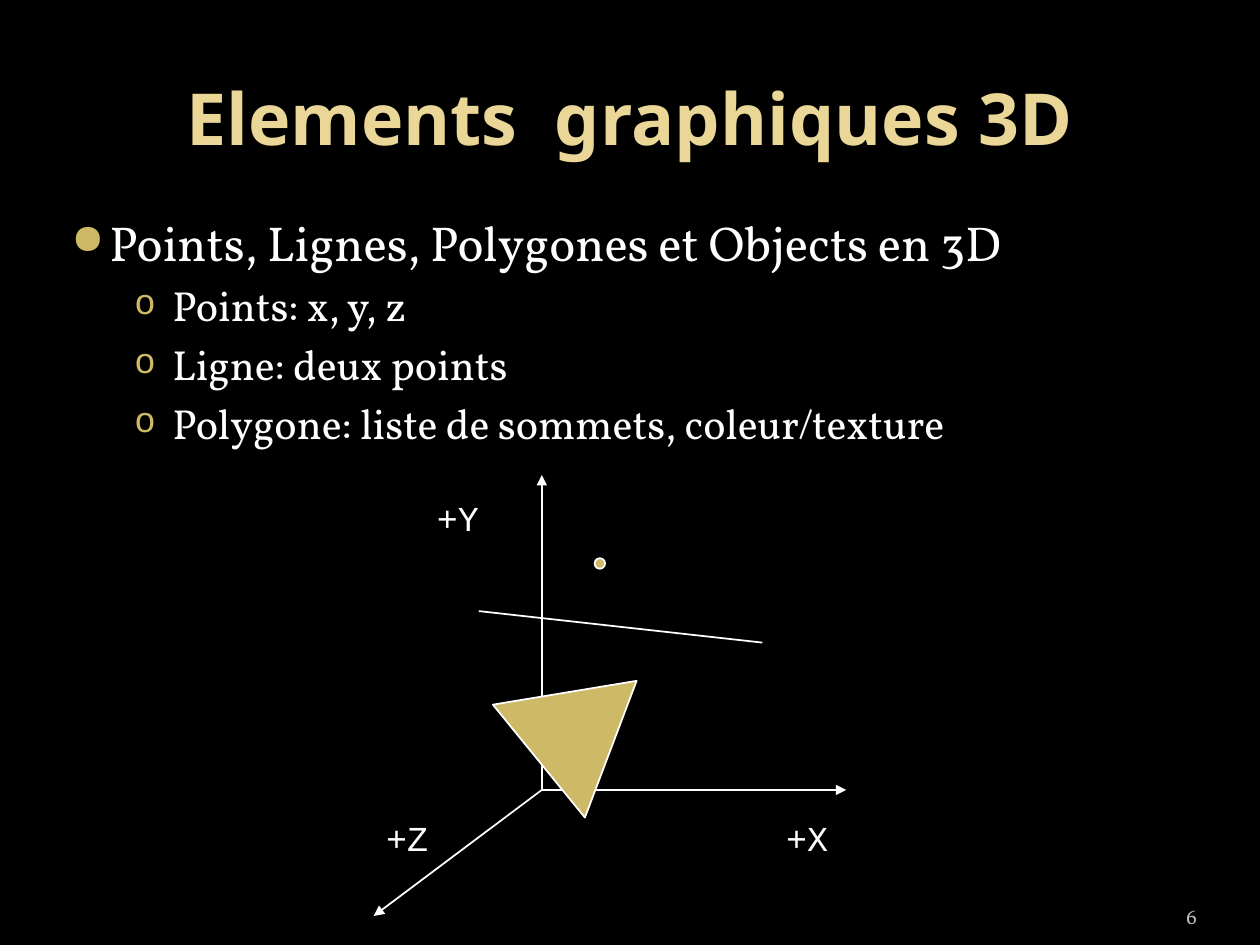
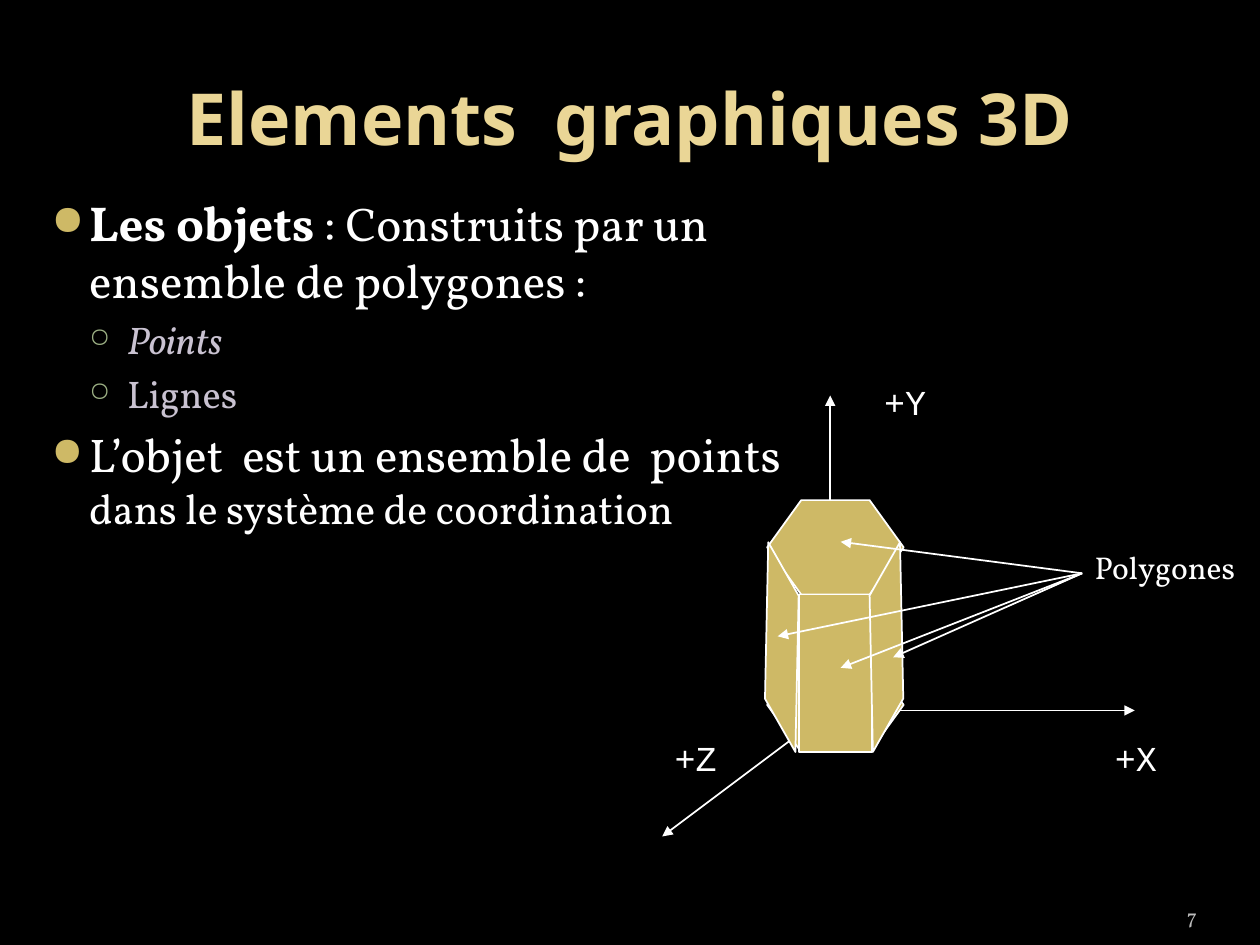
from lxml import etree
from pptx import Presentation
from pptx.dml.color import RGBColor
from pptx.enum.shapes import MSO_CONNECTOR as Link, MSO_SHAPE as Kind
from pptx.enum.text import MSO_ANCHOR as Anchor, MSO_AUTO_SIZE as Fit, PP_ALIGN as Align
from pptx.oxml.ns import qn
from pptx.util import Pt

SERIF, SANS, MONO = "Vollkorn", "Noto Sans", "Courier New"
WHITE, GOLD, PALE = "FFFFFF", "CEB966", "EAD696"
GREY, GREEN, LILAC = "BDBDBD", "9CB084", "C9C2D1"

# Bullet styles: margin, sign, colour, size in percent, font
DOT = (21.6, "●", GOLD, 85, None)
LOOP = (57.6, "o", GOLD, 85, MONO)
RING = (43.2, "○", GREEN, 70, None)


def rgb(code):
    return RGBColor.from_string(code)


def style(run, size, color=WHITE, face=SERIF, bold=False, italic=False):
    font = run.font
    font.size, font.name = Pt(size), face
    font.bold, font.italic = bold, italic
    font.color.rgb = rgb(color)


def add_text(shapes, box, text, size, color=WHITE, face=SERIF):
    """Add a one-line text box that does not wrap."""
    item = shapes.add_textbox(*map(Pt, box))
    frame = item.text_frame
    frame.text = text
    frame.word_wrap = False
    frame.auto_size = Fit.SHAPE_TO_FIT_TEXT
    style(frame.paragraphs[0].runs[0], size, color, face)
    return frame


def add_line(shapes, start, end, arrow=True):
    line = shapes.add_connector(Link.STRAIGHT, *map(Pt, (*start, *end)))
    line.line.color.rgb = rgb(WHITE)
    line.line.width = Pt(1)
    props = line.element.spPr
    if arrow:
        etree.SubElement(props.find(qn("a:ln")), qn("a:tailEnd"), type="triangle")
    etree.SubElement(props, qn("a:effectLst"))


def add_form(shapes, kind, box, turn=0, adjust=None):
    form = shapes.add_shape(kind, *map(Pt, box))
    form.shadow.inherit = False
    form.fill.solid()
    form.fill.fore_color.rgb = rgb(GOLD)
    form.line.color.rgb = rgb(WHITE)
    form.line.width = Pt(1)
    form.rotation = turn
    if adjust is not None:
        form.adjustments[0] = adjust
    return form


def set_bullet(para, bullet):
    margin, sign, color, size, face = bullet
    props = para._p.get_or_add_pPr()
    props.set("marL", str(Pt(margin)))
    props.set("indent", str(Pt(-21.6)))
    tint = etree.SubElement(props, qn("a:buClr"))
    etree.SubElement(tint, qn("a:srgbClr"), val=color)
    etree.SubElement(props, qn("a:buSzPct"), val=str(size * 1000))
    if face:
        etree.SubElement(props, qn("a:buFont"), typeface=face)
    etree.SubElement(props, qn("a:buChar"), char=sign)


def add_list(slide, box, items):
    """Fill a box with items, each a bullet style and its runs."""
    frame = slide.shapes.add_textbox(*map(Pt, box)).text_frame
    frame.word_wrap = True
    for i, (bullet, *runs) in enumerate(items):
        para = frame.add_paragraph() if i else frame.paragraphs[0]
        para.level = 0 if bullet is DOT else 1
        para.space_before = Pt(0.2 * runs[0][1])
        set_bullet(para, bullet)
        for text, size, *look in runs:
            run = para.add_run()
            run.text = text
            style(run, size, *look)


def add_axes(shapes, x, y, up, right):
    """Draw three axes from x, y; up and right offset the Y and X labels."""
    for dx, dy in ((0, -180), (174, 0), (-96, 72)):
        add_line(shapes, (x, y), (x + dx, y + dy))
    for text, (dx, dy) in (("+Y", up), ("+Z", (-96, 11.6)), ("+X", (right, 11.6))):
        add_text(shapes, (x + dx, y + dy, 38.4, 31), text, 20, face=MONO)


def add_prism(shapes, x, y):
    for drop in (0, 90):
        add_form(shapes, Kind.HEXAGON, (x, y + drop, 78, 54), adjust=0.361)
    add_form(shapes, Kind.RECTANGLE, (x + 18, y + 54, 42, 90))
    for dx, turn in ((8.4, 88.8), (-51.4, 271.2)):
        side = add_form(shapes, Kind.PARALLELOGRAM, (x + dx, y + 75, 119.5, 18),
                        turn, 1.673)
        if dx > 0:
            side.element.spPr.xfrm.set("flipV", "1")


def add_rays(shapes, x, y):
    """Point from the label to four faces."""
    for dx, dy in ((-138, -18), (-108, 48), (-138, 54), (-174, 36)):
        add_line(shapes, (x, y), (x + dx, y + dy))
    add_text(shapes, (x, y - 18, 96.5, 29), "Polygones", 18)


def add_slide(deck, number):
    slide = deck.slides.add_slide(deck.slide_layouts[5])
    title = slide.shapes.title
    title.left, title.top, title.width, title.height = map(Pt, (36, 21.6, 648, 90))
    frame = title.text_frame
    frame.text = "Elements  graphiques 3D"
    frame.word_wrap, frame.auto_size = True, Fit.NONE
    frame.vertical_anchor = Anchor.MIDDLE
    frame.paragraphs[0].alignment = Align.CENTER
    style(frame.paragraphs[0].runs[0], 41, PALE, SANS, True)

    foot = add_text(slide.shapes, (624, 505.4, 60, 28.8), str(number), 12, GREY)
    foot.word_wrap, foot.auto_size = True, Fit.NONE
    foot.vertical_anchor = Anchor.BOTTOM
    foot.margin_left = foot.margin_right = 0
    foot.paragraphs[0].alignment = Align.RIGHT
    return slide


def add_basics(deck):
    slide = add_slide(deck, 6)
    add_list(slide, (33.8, 118, 656, 337.5), [
        (DOT, ("Points, Lignes, Polygones et Objects en 3D", 28)),
        (LOOP, ("Points: x, y, z", 24)),
        (LOOP, ("Ligne: deux points", 24)),
        (LOOP, ("Polygone: liste de sommets, coleur/texture", 24)),
    ])
    shapes = slide.shapes
    add_axes(shapes, 309.6, 451.4, (-67, -171.4), 132.5)
    add_form(shapes, Kind.OVAL, (339.8, 319, 6, 6))
    add_form(shapes, Kind.ISOSCELES_TRIANGLE, (273.6, 379.4, 83.5, 72), 290.7)
    add_line(shapes, (273.6, 349.2), (435.6, 367.2), arrow=False)


def add_objects(deck):
    slide = add_slide(deck, 7)
    add_list(slide, (22.3, 106.6, 450, 337.5), [
        (DOT, ("Les objets ", 28, WHITE, SERIF, True), (": ", 28),
         ("Construits par un ensemble de polygones :", 27)),
        (RING, ("Points", 22, LILAC, SERIF, False, True)),
        (RING, ("Lignes", 22, LILAC)),
        (DOT, ("L’objet  est un ensemble de  points ", 27),
         ("dans le système de coordination", 24)),
    ])
    shapes = slide.shapes.add_group_shape().shapes
    add_axes(shapes, 474.4, 406, (23.8, -192.2), 155.6)
    add_prism(shapes, 438.4, 285.8)
    add_rays(shapes, 618.4, 327.6)


def main():
    deck = Presentation()
    deck.slide_width, deck.slide_height = Pt(720), Pt(540)
    back = deck.slide_master.background.fill
    back.solid()
    back.fore_color.rgb = rgb("000000")
    add_basics(deck)
    add_objects(deck)
    deck.save("out.pptx")


if __name__ == "__main__":
    main()
